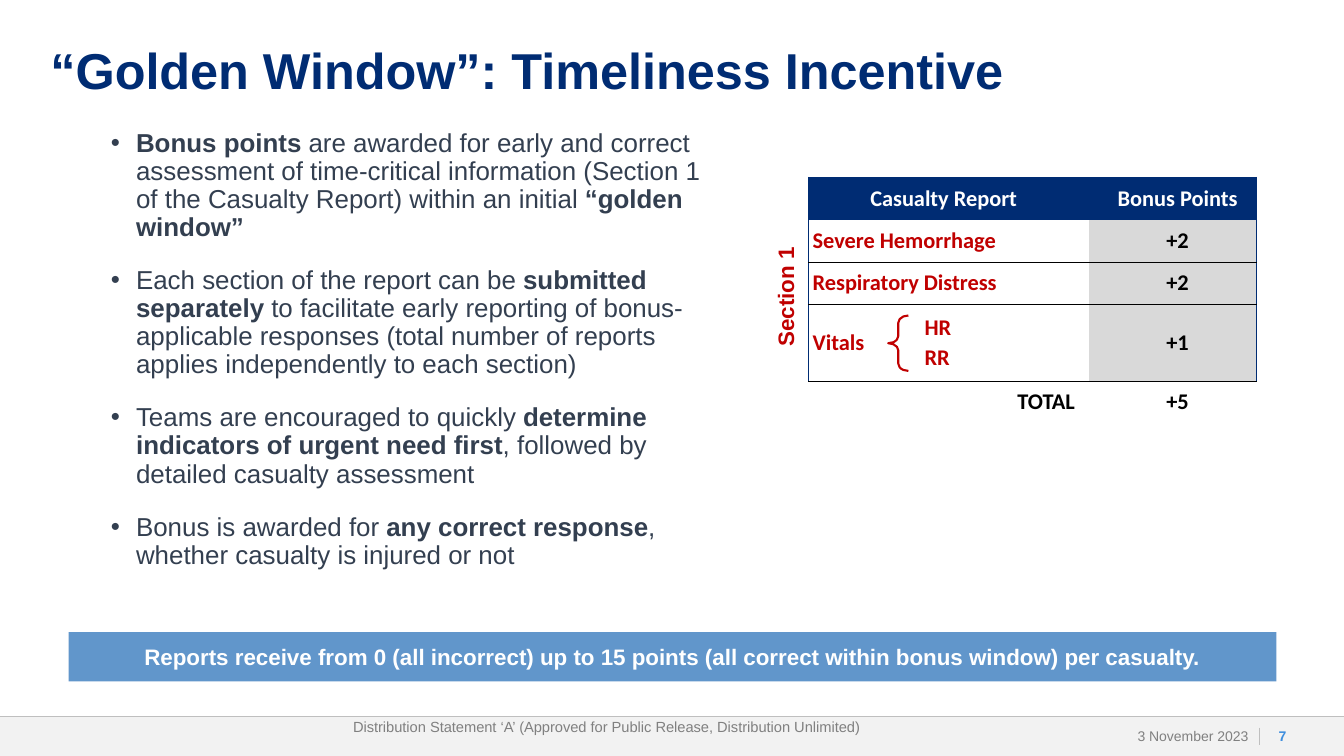
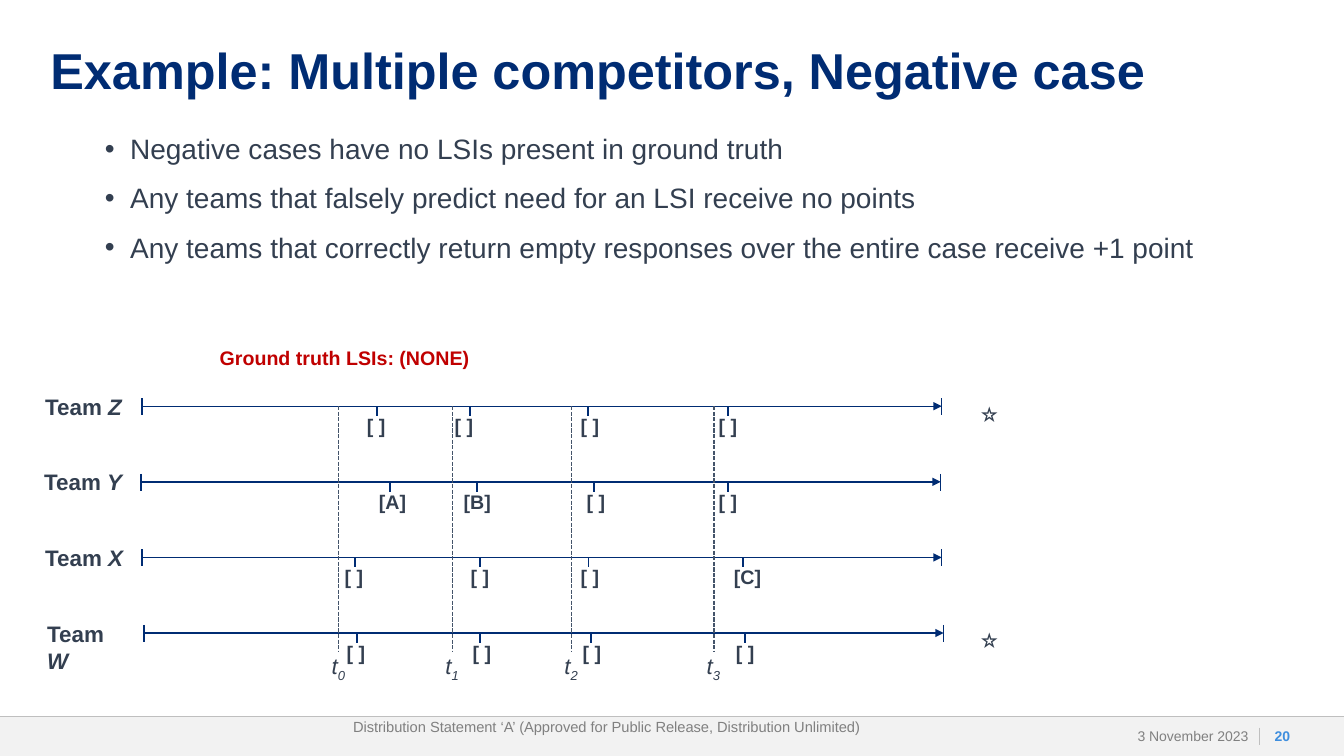
from dataclasses import dataclass

from lxml import etree
from pptx import Presentation
from pptx.dml.color import RGBColor
from pptx.enum.dml import MSO_LINE
from pptx.enum.shapes import MSO_CONNECTOR, MSO_SHAPE
from pptx.enum.text import MSO_ANCHOR, PP_ALIGN
from pptx.oxml.ns import qn
from pptx.util import Inches, Pt

LEFT, CENTER, RIGHT = PP_ALIGN.LEFT, PP_ALIGN.CENTER, PP_ALIGN.RIGHT
TOP, MIDDLE = MSO_ANCHOR.TOP, MSO_ANCHOR.MIDDLE
RECT, BRACE = MSO_SHAPE.RECTANGLE, MSO_SHAPE.LEFT_BRACE
STRAIGHT, DASH = MSO_CONNECTOR.STRAIGHT, MSO_LINE.SQUARE_DOT
W, H = 13.33, 7.5


@dataclass(frozen=True)
class Theme:
    navy: str = "002C73"
    text: str = "333F50"
    red: str = "C00000"
    blue: str = "1F6AB6"
    accent: str = "3E8EDE"
    slate: str = "44546A"
    gray: str = "808080"
    rule: str = "BFBFBF"
    band: str = "F2F2F2"
    shade: str = "D9D9D9"
    white: str = "FFFFFF"
    black: str = "000000"
    font: str = "Arial"
    table_font: str = "Calibri"
    title: float = 36
    lead: float = 20
    body: float = 18.5
    label: float = 16
    mark: float = 14
    statement: float = 10.5
    footer: float = 10


T = Theme()
FOOT_Y = 7.11
DATE = "3 November 2023"
STATEMENT = "Distribution Statement ‘A’ (Approved for Public Release, Distribution Unlimited)"

WINDOW = {
    "title": "“Golden Window”: Timeliness Incentive",
    "number": "7",
    "bullets": [
        [("Bonus points", "b"),
         (" are awarded for early and correct assessment of time-critical information "
          "(Section 1 of the Casualty Report) within an initial ", ""),
         ("“golden window”", "b")],
        [("Each section of the report can be ", ""), ("submitted separately ", "b"),
         ("to facilitate early reporting of bonus-applicable responses "
          "(total number of reports applies independently to each section)", "")],
        [("Teams are encouraged to quickly ", ""),
         ("determine indicators of urgent need first", "b"),
         (", followed by detailed casualty assessment", "")],
        [("Bonus is awarded for ", ""), ("any correct response", "b"),
         (", whether casualty is injured or not", "")],
    ],
    "banner": "Reports receive from 0 (all incorrect) up to 15 points "
              "(all correct within bonus window) per casualty.",
}
REPORT = [
    (["Casualty Report"], None, ["Bonus Points"]),
    (["Severe Hemorrhage"], None, ["+2"]),
    (["Respiratory Distress"], None, ["+2"]),
    (["Vitals"], ["HR", "RR"], ["+1"]),
    (["TOTAL"], None, ["+5"]),
]
REPORT_X, REPORT_Y = 8.02, 1.76
REPORT_COLS = (1.11, 1.67, 1.66)
REPORT_ROWS = (0.42, 0.42, 0.42, 0.76, 0.42)

NEGATIVE = {
    "title": "Example: Multiple competitors, Negative case",
    "number": "20",
    "bullets": [
        "Negative cases have no LSIs present in ground truth",
        "Any teams that falsely predict need for an LSI receive no points",
        "Any teams that correctly return empty responses over the entire case receive +1 point",
    ],
    "truth": "Ground truth LSIs: (NONE)",
}
TEAMS = [
    ("Z", 1.41, True, [(3.74, 3.54, "[ ]"), (4.66, 4.41, "[ ]"),
                       (5.83, 5.66, "[ ]"), (7.22, 7.03, "[ ]")]),
    ("Y", 1.4, False, [(3.87, 3.66, "[A]"), (4.73, 4.5, "[B]"),
                       (5.89, 5.72, "[ ]"), (7.22, 7.03, "[ ]")]),
    ("X", 1.41, False, [(3.52, 3.32, "[ ]"), (4.76, 4.57, "[ ]"),
                        (5.84, 5.66, "[ ]"), (7.37, 7.18, "[C]")]),
    ("W", 1.43, True, [(3.54, 3.34, "[ ]"), (4.76, 4.59, "[ ]"),
                       (5.86, 5.68, "[ ]"), (7.39, 7.2, "[ ]")]),
]
TIMES = (3.36, 4.49, 5.67, 7.08)
AXIS_Y, AXIS_STEP, AXIS_LEN = 4.03, 0.75, 7.93


def rgb(value):
    return RGBColor.from_string(value)


def inches(values):
    return [Inches(v) for v in values]


def write(tf, paras, size, color, flags="", font=T.font, align=LEFT, spacing=None,
          before=0, after=0, bullet=False):
    for i, runs in enumerate(paras):
        p = tf.paragraphs[0] if i == 0 else tf.add_paragraph()
        if bullet:
            pPr = p._p.get_or_add_pPr()
            pPr.set("marL", str(Inches(0.25)))
            pPr.set("indent", str(-Inches(0.25)))
            etree.SubElement(pPr, qn("a:buFont")).set("typeface", T.font)
            etree.SubElement(pPr, qn("a:buChar")).set("char", "•")
        p.alignment = align
        if spacing:
            p.line_spacing = spacing
        if before and i:
            p.space_before = Pt(before)
        if after:
            p.space_after = Pt(after)
        for text, own in [(runs, "")] if isinstance(runs, str) else runs:
            r = p.add_run()
            r.text = text
            f = r.font
            f.name, f.size, f.color.rgb = font, Pt(size), rgb(color)
            f.bold, f.italic = "b" in flags + own, "i" in flags + own
            if "s" in own:
                f._element.set("baseline", "-25000")


def frame(tf, inset, anchor, wrap):
    tf.word_wrap, tf.vertical_anchor = wrap, anchor
    tf.margin_left, tf.margin_top, tf.margin_right, tf.margin_bottom = inches(inset)


def add_text(s, box, paras, size, color, flags="", inset=(0.1, 0.05, 0.1, 0.05),
             anchor=TOP, wrap=False, **style):
    sp = s.shapes.add_textbox(*inches(box))
    frame(sp.text_frame, inset, anchor, wrap)
    write(sp.text_frame, paras, size, color, flags, **style)
    return sp


def add_block(s, kind, box, fill=None, line=None):
    sp = s.shapes.add_shape(kind, *inches(box))
    sp.shadow.inherit = False
    if fill:
        sp.fill.solid()
        sp.fill.fore_color.rgb = rgb(fill)
    else:
        sp.fill.background()
    if line:
        sp.line.color.rgb, sp.line.width = rgb(line), Pt(1.5)
    else:
        sp.line.fill.background()
    return sp


def add_line(s, x1, y1, x2, y2, color=T.navy, width=1, dash=None, arrow=False):
    c = s.shapes.add_connector(STRAIGHT, *inches((x1, y1, x2, y2)))
    c.line.color.rgb, c.line.width = rgb(color), Pt(width)
    if dash:
        c.line.dash_style = dash
    if arrow:
        etree.SubElement(c.line._get_or_add_ln(), qn("a:tailEnd")).set("type", "triangle")
    etree.SubElement(c._element.spPr, qn("a:effectLst"))


def add_base(prs, content):
    s = prs.slides.add_slide(prs.slide_layouts[6])
    flat = (0, 0, 0, 0)
    add_block(s, RECT, (0, FOOT_Y, W, H - FOOT_Y), T.band)
    add_line(s, 0, FOOT_Y, W, FOOT_Y, T.rule, 0.5)
    add_line(s, 12.49, 7.22, 12.49, 7.39, T.rule, 0.5)
    add_text(s, (0.5, 0.46, 12.33, 0.83), [content["title"]], T.title, T.navy, "b",
             inset=flat, wrap=True, spacing=0.9)
    add_text(s, (10.98, FOOT_Y, 1.5, 0.39), [DATE], T.footer, T.gray,
             inset=(0.1, 0, 0.1, 0), anchor=MIDDLE, wrap=True, align=RIGHT)
    add_text(s, (12.51, FOOT_Y, 0.42, 0.39), [content["number"]], T.footer, T.accent, "b",
             inset=flat, anchor=MIDDLE, wrap=True, align=CENTER)
    add_text(s, (0.69, 7.07, 10.66, 0.28), [STATEMENT], T.statement, T.gray,
             wrap=True, align=CENTER)
    return s


def add_bullets(s, box, content, size, spacing, before):
    add_text(s, box, content["bullets"], size, T.text, inset=(0, 0, 0, 0), wrap=True,
             spacing=spacing, before=before, bullet=True)


def set_borders(cell, sides):
    tcPr = cell._tc.get_or_add_tcPr()
    for i, (tag, edge) in enumerate(zip(("lnL", "lnR", "lnT", "lnB"), sides)):
        ln = etree.Element(qn("a:" + tag))
        if edge:
            ln.set("w", str(Pt(edge[1])))
            fill = etree.SubElement(ln, qn("a:solidFill"))
            etree.SubElement(fill, qn("a:srgbClr")).set("val", edge[0])
        else:
            etree.SubElement(ln, qn("a:noFill"))
        tcPr.insert(i, ln)


def add_report(s):
    size = (sum(REPORT_COLS), sum(REPORT_ROWS))
    table = s.shapes.add_table(len(REPORT), len(REPORT_COLS),
                               *inches((REPORT_X, REPORT_Y) + size)).table
    table.first_row = table.horz_banding = False
    for col, width in zip(table.columns, REPORT_COLS):
        col.width = Inches(width)
    for row, height in zip(table.rows, REPORT_ROWS):
        row.height = Inches(height)
    outer, inner = (T.navy, 1), (T.black, 0.5)
    rules = (outer, outer, inner, inner, inner, None)
    total = len(REPORT) - 1
    for i, row in enumerate(REPORT):
        if row[1] is None:
            table.cell(i, 0).merge(table.cell(i, 1))
        for j, paras in enumerate(row):
            cell, points = table.cell(i, j), j == 2
            fill = T.navy if i == 0 else T.shade if points else T.white
            if i == total:
                cell.fill.background()
            else:
                cell.fill.solid()
                cell.fill.fore_color.rgb = rgb(fill)
            set_borders(cell, (outer if j == 0 and i < total else None,
                               outer if points and i < total else None,
                               rules[i], rules[i + 1]))
            if paras is None:
                continue
            color = T.white if i == 0 else T.black if points or i == total else T.red
            align = CENTER if points or i == 0 else RIGHT if i == total else LEFT
            cell.vertical_anchor = MIDDLE
            cell.margin_left, cell.margin_right = inches((0.14, 0.04) if points else (0.04, 0.14))
            cell.margin_top = cell.margin_bottom = Inches(0.04)
            write(cell.text_frame, paras, T.label, color, "b", T.table_font, align,
                  after=2 if i >= 3 and j else 0)


def build_window(prs):
    s = add_base(prs, WINDOW)
    add_bullets(s, (1.1, 1.29, 5.86, 4.71), WINDOW, T.body, 0.9, 18)
    add_report(s)
    sp = add_text(s, (7.19, 2.75, 1.2, 0.37), ["Section 1"], T.label, T.red, "b")
    sp.rotation = 270
    sp = add_block(s, BRACE, (8.81, 3.13, 0.2, 0.55), line=T.red)
    sp.adjustments[0] = 0.36
    sp = add_block(s, RECT, (0.68, 6.27, 11.98, 0.49), T.blue)
    clr = sp._element.spPr.find(qn("a:solidFill")).find(qn("a:srgbClr"))
    etree.SubElement(clr, qn("a:alpha")).set("val", "70000")
    frame(sp.text_frame, (0.1, 0.05, 0.1, 0.05), MIDDLE, True)
    write(sp.text_frame, [WINDOW["banner"]], T.label, T.white, "b", align=CENTER)


def build_negative(prs):
    s = add_base(prs, NEGATIVE)
    add_bullets(s, (1.04, 1.29, 11.25, 2), NEGATIVE, T.lead, 1.05, 10)
    add_text(s, (2.08, 3.38, 2.69, 0.34), [NEGATIVE["truth"]], T.mark, T.red, "b")
    for i, (team, x, star, reports) in enumerate(TEAMS):
        y, end = AXIS_Y + i * AXIS_STEP, x + AXIS_LEN
        add_text(s, (x - 1.06, y - 0.18, 0.98, 0.37), [[("Team ", ""), (team, "i")]],
                 T.label, T.text, "b")
        add_line(s, x, y, end, y, arrow=True)
        for cap in (x, end):
            add_line(s, cap, y - 0.08, cap, y + 0.09)
        for tick, left, mark in reports:
            add_line(s, tick, y, tick, y + 0.1)
            add_text(s, (left, y + 0.03, 0.39 if mark == "[ ]" else 0.47, 0.34), [mark],
                     T.mark, T.text, "b")
        if star:
            add_text(s, (9.62, y - 0.16, 0.48, 0.44), ["⭐️"], T.lead, T.text)
    for i, x in enumerate(TIMES):
        add_line(s, x, AXIS_Y, x, 6.47, T.slate, dash=DASH)
        add_text(s, (x - 0.17, 6.42, 0.35, 0.37), [[("t", ""), (str(i), "s")]],
                 T.label, T.text, "i")


def main():
    prs = Presentation()
    prs.slide_width, prs.slide_height = inches((W, H))
    build_window(prs)
    build_negative(prs)
    prs.save("out.pptx")


if __name__ == "__main__":
    main()
